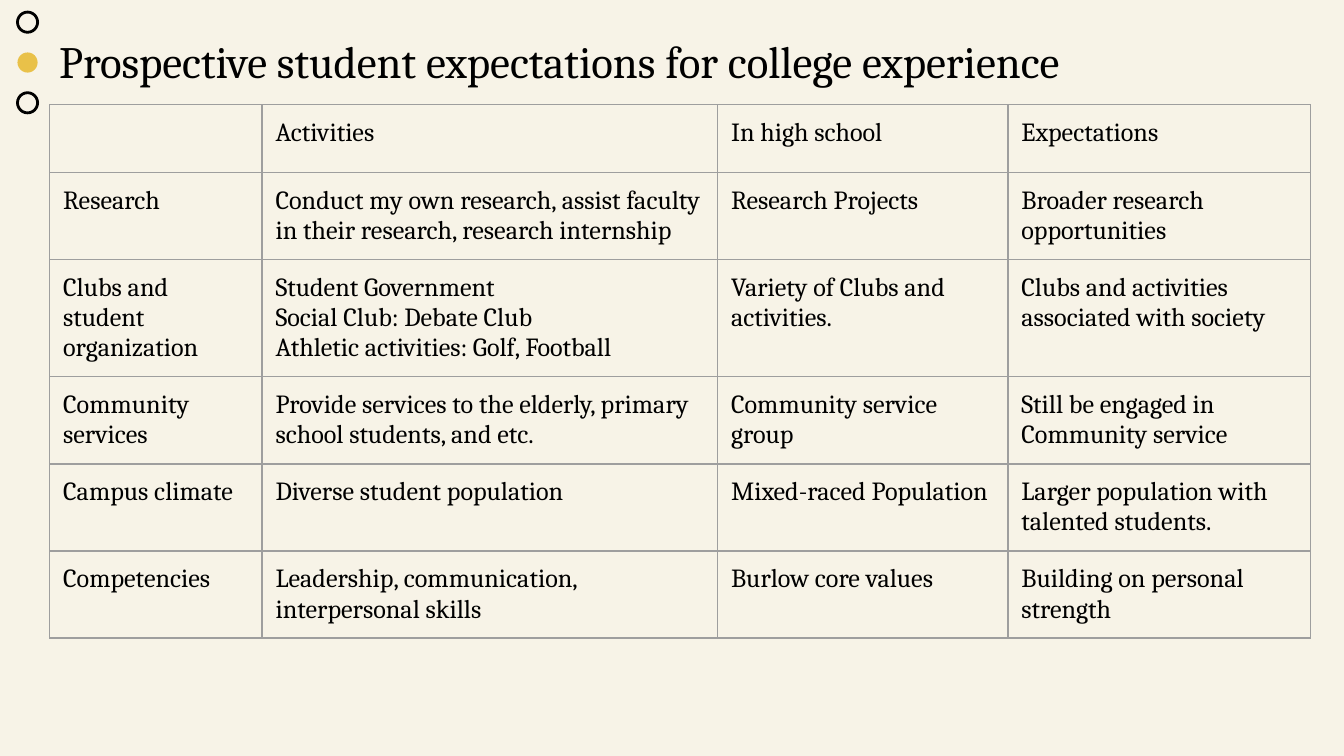
from typing import NamedTuple, Optional

from lxml import etree
from pptx import Presentation
from pptx.dml.color import RGBColor
from pptx.enum import shapes, text
from pptx.oxml import ns
from pptx.util import Inches, Pt

CREAM = RGBColor(0xF7, 0xF3, 0xE7)
GOLD = RGBColor(0xE9, 0xC1, 0x49)
BLACK = RGBColor(0, 0, 0)
GREY = RGBColor(0x9E, 0x9E, 0x9E)
FONT = "Cambria"
INSET = Inches(0.1)


class Dot(NamedTuple):
    top: float
    fill: RGBColor
    line: Optional[RGBColor] = None


DOTS = [Dot(0.09, CREAM, BLACK), Dot(0.39, GOLD), Dot(0.69, CREAM, BLACK)]

COL_WIDTHS = [1.58, 3.39, 2.16, 2.25]
ROW_HEIGHTS = [0.5] * 5 + [0.54]
ROWS = [
    ["", "Activities", "In high school", "Expectations"],
    ["Research",
     "Conduct my own research, assist faculty in their research, research internship",
     "Research Projects", "Broader research\nopportunities"],
    ["Clubs and student organization",
     "Student Government\nSocial Club: Debate Club\nAthletic activities: Golf, Football",
     "Variety of Clubs and activities.", "Clubs and activities associated with society"],
    ["Community services",
     "Provide services to the elderly, primary school students, and etc.",
     "Community service group", "Still be engaged in Community service"],
    ["Campus climate", "Diverse student population",
     "Mixed-raced Population", "Larger population with talented students."],
    ["Competencies", "Leadership, communication, interpersonal skills",
     "Burlow core values", "Building on personal strength"],
]


def write(tf, content: str, *, size: float, color: RGBColor = BLACK,
          align=text.PP_ALIGN.LEFT) -> None:
    """Fill a text frame, one paragraph per line of content."""
    tf.text = content
    for p in tf.paragraphs:
        p.alignment = align
        for r in p.runs:
            r.font.name = FONT
            r.font.size = Pt(size)
            r.font.color.rgb = color


def set_insets(box) -> None:
    box.margin_left = box.margin_right = INSET
    box.margin_top = box.margin_bottom = INSET


def add_borders(cell, color: RGBColor, width: float) -> None:
    tc_pr = cell._tc.get_or_add_tcPr()
    for i, side in enumerate(("lnL", "lnR", "lnT", "lnB")):
        ln = etree.Element(ns.qn(f"a:{side}"), w=str(Pt(width)))
        fill = etree.SubElement(ln, ns.qn("a:solidFill"))
        etree.SubElement(fill, ns.qn("a:srgbClr"), val=str(color))
        tc_pr.insert(i, ln)


def add_dot(slide, dot: Dot) -> None:
    sp = slide.shapes.add_shape(shapes.MSO_SHAPE.OVAL, Inches(0.13), Inches(dot.top),
                                Inches(0.15), Inches(0.15))
    sp.shadow.inherit = False
    sp.fill.solid()
    sp.fill.fore_color.rgb = dot.fill
    if dot.line is None:
        sp.line.fill.background()
    else:
        sp.line.color.rgb = dot.line
        sp.line.width = Pt(1.5)


def add_title(slide, content: str) -> None:
    title = slide.shapes.title
    title.left, title.top = Inches(0.34), Inches(0.15)
    title.width, title.height = Inches(9.32), Inches(0.63)
    tf = title.text_frame
    set_insets(tf)
    tf.auto_size = text.MSO_AUTO_SIZE.NONE
    tf.vertical_anchor = text.MSO_ANCHOR.TOP
    write(tf, content, size=24)


def add_grid(slide, rows: list[list[str]]) -> None:
    table = slide.shapes.add_table(
        len(rows), len(COL_WIDTHS), Inches(0.37), Inches(0.78),
        Inches(sum(COL_WIDTHS)), Inches(sum(ROW_HEIGHTS))).table
    table.first_row = table.horz_banding = False
    for column, width in zip(table.columns, COL_WIDTHS):
        column.width = Inches(width)
    for row, height, contents in zip(table.rows, ROW_HEIGHTS, rows):
        row.height = Inches(height)
        for cell, content in zip(row.cells, contents):
            set_insets(cell)
            cell.fill.background()
            add_borders(cell, GREY, 0.75)
            if content:
                write(cell.text_frame, content, size=14)


def main() -> None:
    prs = Presentation()
    prs.slide_width = Inches(10)
    prs.slide_height = prs.slide_width * 9 // 16
    slide = prs.slides.add_slide(prs.slide_layouts[5])  # Title Only
    slide.background.fill.solid()
    slide.background.fill.fore_color.rgb = CREAM

    # Heading and comparison table
    add_title(slide, "Prospective student expectations for college experience")
    add_grid(slide, ROWS)

    # Dots in the top left corner
    for dot in DOTS:
        add_dot(slide, dot)

    prs.save("out.pptx")


if __name__ == "__main__":
    main()
